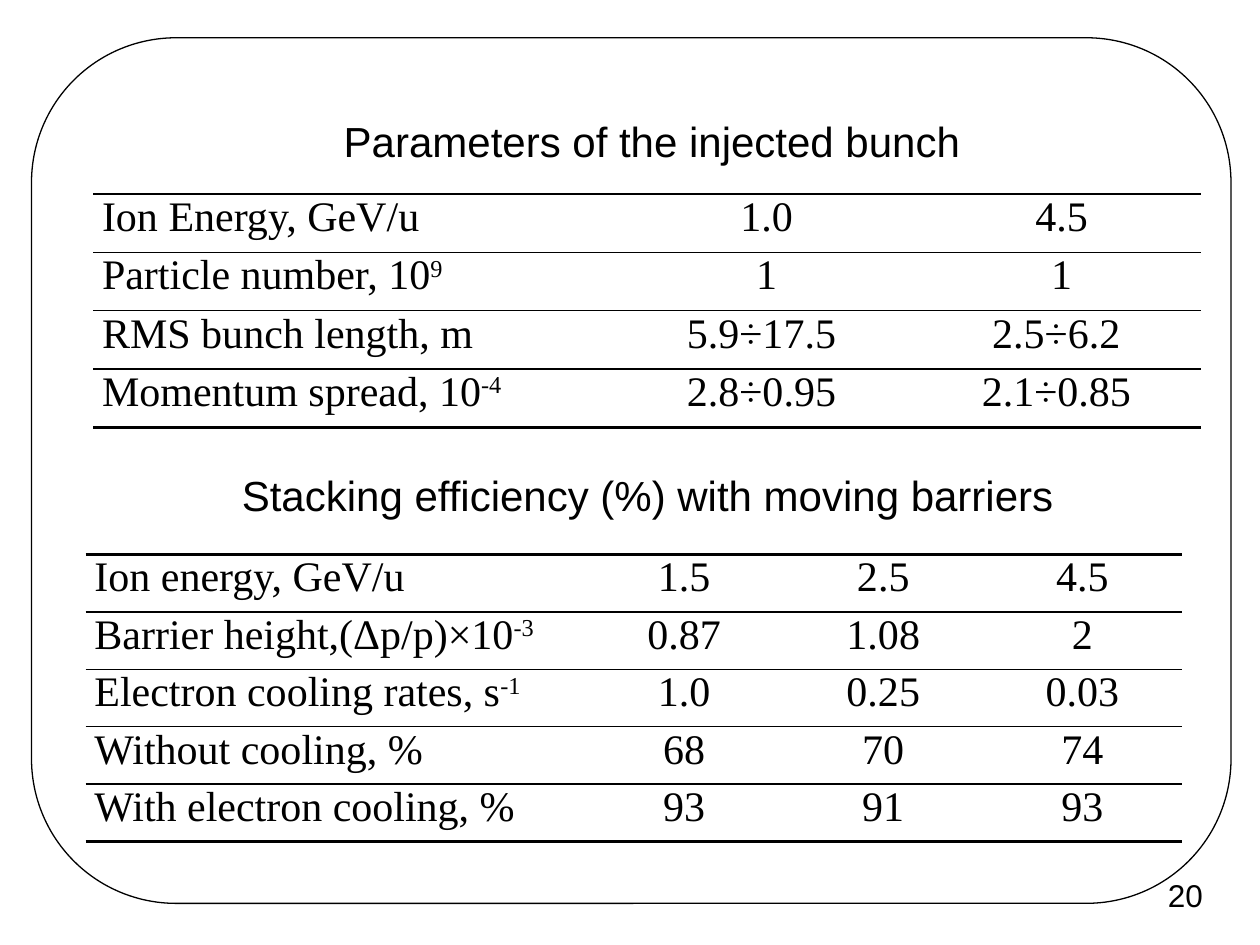
"""Build a slide with two tables on bunch parameters and stacking efficiency."""
from typing import NamedTuple

from lxml import etree
from pptx import Presentation
from pptx.dml.color import RGBColor
from pptx.enum.shapes import MSO_SHAPE
from pptx.enum.text import MSO_AUTO_SIZE, PP_ALIGN
from pptx.oxml.ns import qn
from pptx.util import Inches, Pt

BLACK = RGBColor(0x00, 0x00, 0x00)
WHITE = RGBColor(0xFF, 0xFF, 0xFF)
ROUNDED = MSO_SHAPE.ROUNDED_RECTANGLE
LEFT, CENTER = PP_ALIGN.LEFT, PP_ALIGN.CENTER
GROW = MSO_AUTO_SIZE.SHAPE_TO_FIT_TEXT

COLUMNS, ROWS = 100, 75
SLIDE_WIDTH, SLIDE_HEIGHT = Inches(10), Inches(7.5)
OUTER_RULE, INNER_RULE = Pt(1.5), Pt(1)


class Area(NamedTuple):
    """A place on the slide, in grid columns and rows."""

    column: float
    row: float
    columns: float
    rows: float


class Label(NamedTuple):
    """A line of text in its own box."""

    text: str
    area: Area
    size: int = 24
    align: PP_ALIGN = LEFT
    wrap: bool = False


class Quantity(NamedTuple):
    """A table row: a name, its raised exponent and its values."""

    name: str
    exponent: str
    values: tuple[str, ...]


class DataTable(NamedTuple):
    """A ruled table with its column widths and row height."""

    column: float
    row: float
    widths: tuple[float, ...]
    row_height: float
    quantities: tuple[Quantity, ...]


FRAME = Area(2.5, 3, 95.2, 68.7)

LABELS = (
    Label("Stacking efficiency (%) with moving barriers",
          Area(9.1, 36.8, 84.6, 5.1), align=CENTER, wrap=True),
    Label("Parameters of the injected bunch", Area(26.3, 8.7, 51.4, 5)),
    Label("20", Area(91.7, 69, 4.8, 4), size=18),
)

TABLES = (
    DataTable(6.8, 44, (39.6, 15.8, 15.8, 15.8), 4.56, (
        Quantity("Ion energy, GeV/u", "", ("1.5", "2.5", "4.5")),
        Quantity("Barrier height,(Δp/p)×10", "-3", ("0.87", "1.08", "2")),
        Quantity("Electron cooling rates, s", "-1", ("1.0", "0.25", "0.03")),
        Quantity("Without cooling, %", "", ("68", "70", "74")),
        Quantity("With electron cooling, %", "", ("93", "91", "93")),
    )),
    DataTable(7.4, 15.4, (41.1, 24.7, 22.1), 4.63, (
        Quantity("Ion Energy, GeV/u", "", ("1.0", "4.5")),
        Quantity("Particle number, 10", "9", ("1", "1")),
        Quantity("RMS bunch length, m", "", ("5.9÷17.5 ", "2.5÷6.2 ")),
        Quantity("Momentum spread, 10", "-4", ("2.8÷0.95 ", "2.1÷0.85 ")),
    )),
)


def across(columns: float) -> int:
    """Turn grid columns into a length."""
    return round(SLIDE_WIDTH * columns / COLUMNS)


def down(rows: float) -> int:
    """Turn grid rows into a length."""
    return round(SLIDE_HEIGHT * rows / ROWS)


def place(area: Area) -> tuple[int, int, int, int]:
    """Turn an area into left, top, width and height."""
    return across(area.column), down(area.row), across(area.columns), down(area.rows)


def add_run(paragraph, text: str, font_name: str, size: int = 24):
    """Add a run of black text and return it."""
    run = paragraph.add_run()
    run.text = text
    run.font.name = font_name
    run.font.size = Pt(size)
    run.font.color.rgb = BLACK
    return run


def draw_frame(slide, area: Area) -> None:
    """Draw the rounded frame around the content."""
    frame = slide.shapes.add_shape(ROUNDED, *place(area))
    frame.adjustments[0] = 0.167
    frame.shadow.inherit = False
    frame.fill.solid()
    frame.fill.fore_color.rgb = WHITE
    frame.line.color.rgb = BLACK
    frame.line.width = Pt(0.75)


def draw_label(slide, label: Label) -> None:
    """Draw a text box."""
    text_frame = slide.shapes.add_textbox(*place(label.area)).text_frame
    text_frame.word_wrap = label.wrap
    text_frame.auto_size = GROW
    paragraph = text_frame.paragraphs[0]
    paragraph.alignment = label.align
    add_run(paragraph, label.text, "Arial", label.size)


def rule_cell(cell, top: int, bottom: int) -> None:
    """Rule a cell above and below and leave its sides open."""
    properties = cell._tc.get_or_add_tcPr()
    for side, width in (("L", 0), ("R", 0), ("T", top), ("B", bottom)):
        border = etree.SubElement(properties, qn(f"a:ln{side}"), w=str(width))
        if width:
            fill = etree.SubElement(border, qn("a:solidFill"))
            etree.SubElement(fill, qn("a:srgbClr"), val=str(BLACK))
        else:
            etree.SubElement(border, qn("a:noFill"))


def fill_cell(cell, text: str, exponent: str, align: PP_ALIGN) -> None:
    """Write a cell's text and raised exponent."""
    cell.fill.background()
    cell.margin_left = cell.margin_right = Inches(0.07)
    cell.margin_top = cell.margin_bottom = 0
    paragraph = cell.text_frame.paragraphs[0]
    paragraph.alignment = align
    paragraph.space_before = paragraph.space_after = Pt(3)
    add_run(paragraph, text, "Times New Roman")
    if exponent:
        raised = add_run(paragraph, exponent, "Times New Roman")
        raised.font._element.set("baseline", "30000")


def draw_table(slide, data: DataTable) -> None:
    """Draw a table with heavier rules at its top and bottom."""
    count = len(data.quantities)
    area = Area(data.column, data.row, sum(data.widths), count * data.row_height)
    table = slide.shapes.add_table(count, len(data.widths), *place(area)).table
    table.first_row = table.horz_banding = False
    for column, width in zip(table.columns, data.widths):
        column.width = across(width)
    for index, quantity in enumerate(data.quantities):
        table.rows[index].height = down(data.row_height)
        top = OUTER_RULE if index == 0 else INNER_RULE
        bottom = OUTER_RULE if index == count - 1 else INNER_RULE
        for position, text in enumerate((quantity.name, *quantity.values)):
            cell = table.cell(index, position)
            rule_cell(cell, top, bottom)
            if position == 0:
                fill_cell(cell, text, quantity.exponent, LEFT)
            else:
                fill_cell(cell, text, "", CENTER)


def main() -> None:
    """Build and save the slide."""
    presentation = Presentation()
    presentation.slide_width = SLIDE_WIDTH
    presentation.slide_height = SLIDE_HEIGHT
    slide = presentation.slides.add_slide(presentation.slide_layouts[6])
    draw_frame(slide, FRAME)
    for data in TABLES:
        draw_table(slide, data)
    for label in LABELS:
        draw_label(slide, label)
    presentation.save("out.pptx")


if __name__ == "__main__":
    main()
